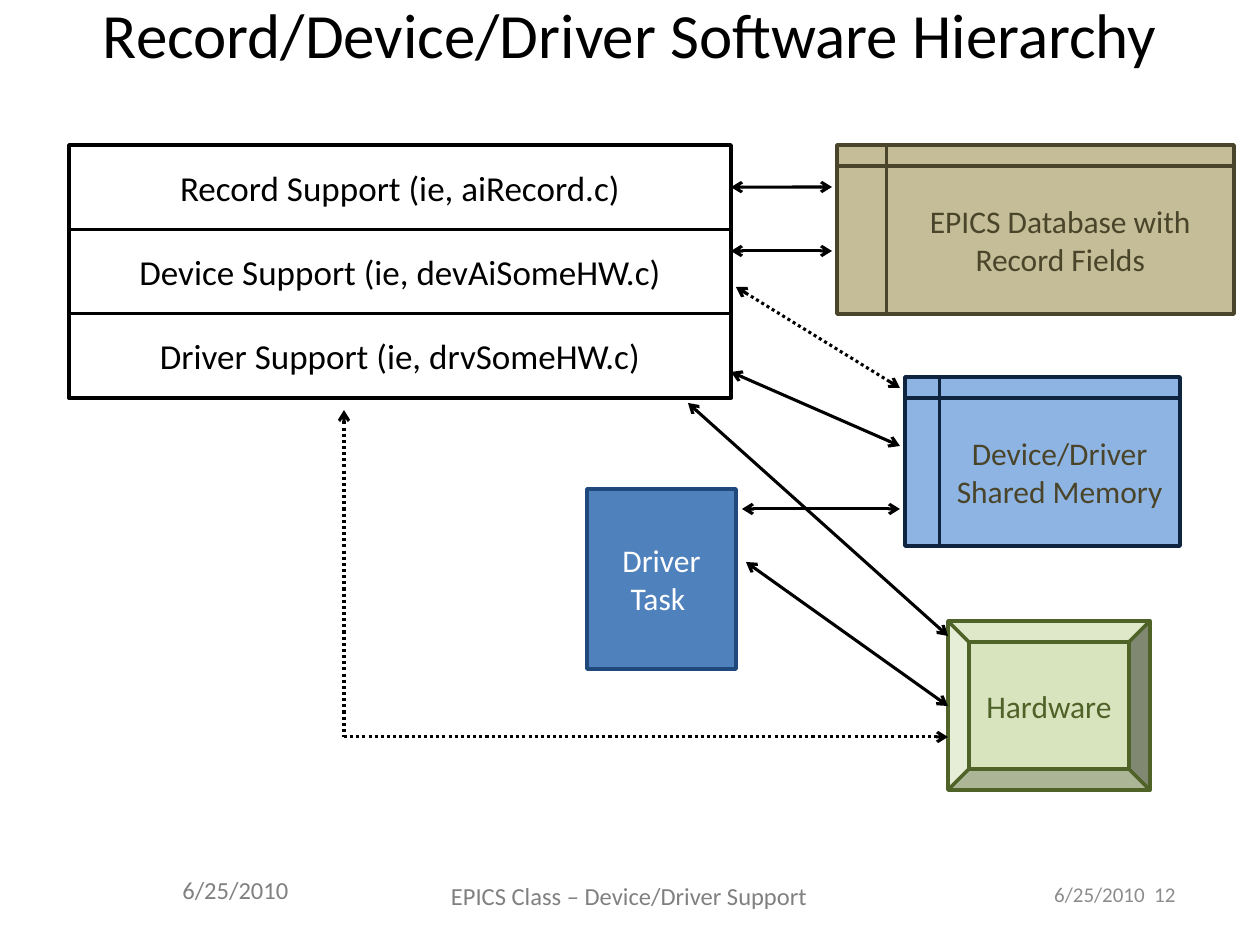
import lxml.etree
import pptx
import pptx.dml.color
import pptx.enum.dml
import pptx.enum.shapes
import pptx.enum.text
import pptx.oxml.ns
import pptx.util

RGBColor = pptx.dml.color.RGBColor
Shapes = pptx.enum.shapes.MSO_SHAPE
Align = pptx.enum.text.PP_ALIGN
Anchor = pptx.enum.text.MSO_ANCHOR
qn = pptx.oxml.ns.qn

SCALE = pptx.util.Inches(10) / 1260
FONT = "Calibri"
BLACK = RGBColor(0x00, 0x00, 0x00)
WHITE = RGBColor(0xFF, 0xFF, 0xFF)
FOOTER_GRAY = RGBColor(0x80, 0x80, 0x80)
NUMBER_GRAY = RGBColor(0x8C, 0x8C, 0x8C)
TAN = RGBColor(0xC4, 0xBD, 0x97)
BROWN = RGBColor(0x4A, 0x45, 0x2A)
LIGHT_BLUE = RGBColor(0x8E, 0xB4, 0xE3)
NAVY = RGBColor(0x0F, 0x24, 0x3E)
BLUE = RGBColor(0x4F, 0x81, 0xBD)
DARK_BLUE = RGBColor(0x1F, 0x49, 0x7D)
LIGHT_GREEN = RGBColor(0xD7, 0xE4, 0xBD)
DARK_GREEN = RGBColor(0x4F, 0x62, 0x28)

SUPPORT_LAYERS = [
    "Record Support (ie, aiRecord.c)",
    "Device Support (ie, devAiSomeHW.c)",
    "Driver Support (ie, drvSomeHW.c)",
]
INTERNAL = Shapes.FLOWCHART_INTERNAL_STORAGE
PROCESS = Shapes.FLOWCHART_PROCESS
PARTS = [
    ("EPICS Database with Record Fields", INTERNAL, (768, 0, 397, 169), TAN, BROWN, BROWN),
    ("Device/Driver Shared Memory", INTERNAL, (836, 232, 275, 169), LIGHT_BLUE, NAVY, BROWN),
    ("Driver Task ", PROCESS, (518, 344, 149, 180), BLUE, DARK_BLUE, WHITE),
    ("Hardware", Shapes.BEVEL, (879, 476, 202, 169), LIGHT_GREEN, DARK_GREEN, DARK_GREEN),
]
BOTH = ("headEnd", "tailEnd")
ARROWS = [
    ((662, 106), (763, 106), BOTH, False),
    ((667, 142), (831, 243), BOTH, True),
    ((662, 227), (831, 301), BOTH, False),
    ((673, 364), (831, 364), BOTH, False),
    ((677, 417), (879, 561), BOTH, False),
    ((619, 258), (879, 491), BOTH, False),
    ((275, 265), (275, 592), ("headEnd",), True),
    ((275, 592), (879, 592), ("tailEnd",), True),
]


def emu(*pixels):
    """Turn pixel lengths into EMU."""
    return [pptx.util.Emu(round(length * SCALE)) for length in pixels]


def inside(box, part):
    """Shift a part's box by the corner of the box that holds it."""
    return box[0] + part[0], box[1] + part[1], part[2], part[3]


def write_text(shape, text, size=18, color=BLACK, align=Align.CENTER, anchor=Anchor.MIDDLE):
    """Put formatted text in a shape."""
    frame = shape.text_frame
    frame.word_wrap = True
    frame.vertical_anchor = anchor
    paragraph = frame.paragraphs[0]
    paragraph.alignment = align
    run = paragraph.add_run()
    run.text = text
    run.font.name = FONT
    run.font.size = pptx.util.Pt(size)
    run.font.color.rgb = color


def add_box(slide, kind, box, fill=None, line=None):
    """Add a preset shape with an optional fill and outline."""
    shape = slide.shapes.add_shape(kind, *emu(*box))
    shape.shadow.inherit = False
    for color, target in ((fill, shape.fill), (line, shape.line.fill)):
        if color is None:
            target.background()
        else:
            target.solid()
            target.fore_color.rgb = color
    if line is not None:
        shape.line.width = pptx.util.Pt(2)
    return shape


def add_arrow(slide, start, end, ends=BOTH, dotted=False):
    """Add a black line with open arrowheads at the named ends."""
    kind = pptx.enum.shapes.MSO_CONNECTOR.STRAIGHT
    connector = slide.shapes.add_connector(kind, *emu(*start, *end))
    connector.line.color.rgb = BLACK
    connector.line.width = pptx.util.Pt(1.75)
    if dotted:
        connector.line.dash_style = pptx.enum.dml.MSO_LINE.ROUND_DOT
    properties = connector.element.spPr
    outline = properties.find(qn("a:ln"))
    for name in ends:
        lxml.etree.SubElement(outline, qn("a:" + name), type="arrow")
    lxml.etree.SubElement(properties, qn("a:effectLst"))
    return connector


def place_title(slide, box):
    """Place the title placeholder."""
    title = slide.shapes.title
    title.left, title.top, title.width, title.height = emu(*box)
    write_text(title, "Record/Device/Driver Software Hierarchy", size=36)


def place_support_stack(slide, box):
    """Stack the support layers in equal rows and return their shapes."""
    left, top, width, height = box
    row = height / len(SUPPORT_LAYERS)
    layers = []
    for index, text in enumerate(SUPPORT_LAYERS):
        layer = add_box(slide, PROCESS, (left, top + index * row, width, row), line=BLACK)
        write_text(layer, text, size=20)
        layers.append(layer)
    return layers


def place_diagram(slide, box):
    """Place the layers, the parts around them and their arrows."""
    layers = place_support_stack(slide, inside(box, (0, 0, 662, 253)))
    for text, kind, part, fill, line, color in PARTS:
        write_text(add_box(slide, kind, inside(box, part), fill, line), text, color=color)
    left, top = box[:2]
    record_arrow = add_arrow(slide, (left + 662, top + 42), (left + 763, top + 42))
    record_arrow.begin_connect(layers[0], 3)
    for start, end, ends, dotted in ARROWS:
        add_arrow(slide, (left + start[0], top + start[1]),
                  (left + end[0], top + end[1]), ends, dotted)


def place_footer(slide, box):
    """Place the date, the class name and the slide number."""
    date = add_box(slide, Shapes.RECTANGLE, inside(box, (0, 0, 202, 50)), fill=WHITE)
    write_text(date, "6/25/2010", size=14, color=FOOTER_GRAY,
               align=Align.LEFT, anchor=Anchor.TOP)
    name = slide.shapes.add_textbox(*emu(*inside(box, (205, 0, 508, 53))))
    write_text(name, "EPICS Class – Device/Driver Support", size=14, color=FOOTER_GRAY)
    number = slide.shapes.add_textbox(*emu(*inside(box, (725, 0, 293, 50))))
    write_text(number, "6/25/2010  12", size=12, color=NUMBER_GRAY, align=Align.RIGHT)


def main():
    """Build and save the presentation."""
    presentation = pptx.Presentation()
    presentation.slide_width, presentation.slide_height = emu(1260, 945)
    slide = presentation.slides.add_slide(presentation.slide_layouts[5])
    place_title(slide, (0, 0, 1260, 66))
    place_diagram(slide, (69, 145, 1165, 645))
    place_footer(slide, (170, 869, 1018, 53))
    presentation.save("out.pptx")


if __name__ == "__main__":
    main()
